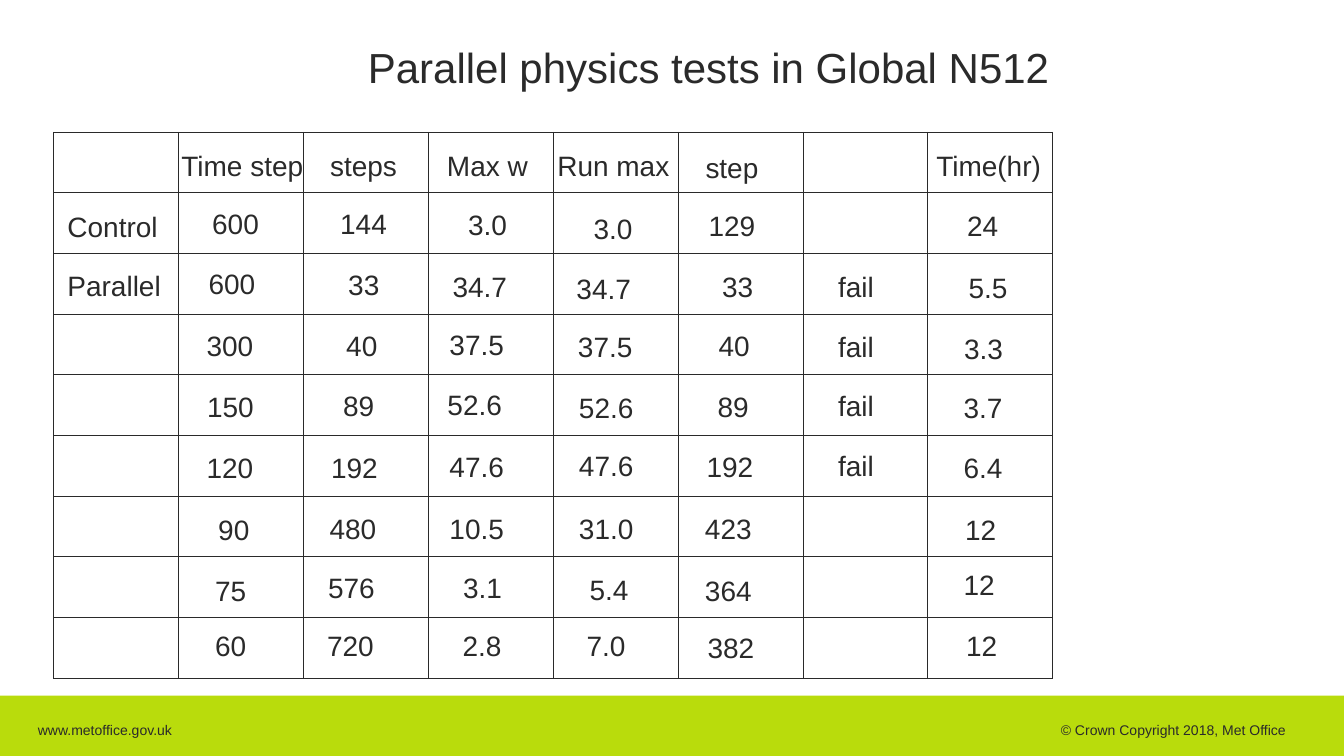
from lxml.etree import SubElement
from pptx import Presentation
from pptx.dml.color import RGBColor
from pptx.enum.shapes import MSO_SHAPE
from pptx.enum.text import MSO_ANCHOR, MSO_AUTO_SIZE, PP_ALIGN
from pptx.oxml.ns import qn
from pptx.util import Inches, Pt

COLORS = {"ink": "2A2A2A", "lime": "B9DC0C"}
PAD = 0.08
DIGIT, POINT = 0.31, 0.155
WORDS = {
    "Control": 1.97, "Parallel": 2.03, "Time step": 2.62, "steps": 1.5,
    "Max w": 1.78, "Run max": 2.4, "step": 1.22, "Time(hr)": 2.28, "fail": 0.87,
}

# Each label is (text, left, top), listed by column.
LABELS = {
    "case": [("Control", 1.26, 4.07), ("Parallel", 1.26, 5.24)],
    "time step": [
        ("Time step", 3.52, 2.86), ("600", 4.13, 4.01), ("600", 4.06, 5.2),
        ("300", 4.02, 6.43), ("150", 4.03, 7.65), ("120", 4.02, 8.85),
        ("90", 4.25, 10.08), ("75", 4.19, 11.3), ("60", 4.19, 12.38),
    ],
    "steps": [
        ("steps", 6.47, 2.87), ("144", 6.67, 4.02), ("33", 6.83, 5.22),
        ("40", 6.79, 6.43), ("89", 6.73, 7.62), ("192", 6.49, 8.85),
        ("480", 6.46, 10.06), ("576", 6.43, 11.23), ("720", 6.41, 12.38),
    ],
    "max w": [
        ("Max w", 8.79, 2.86), ("3.0", 9.21, 4.04), ("34.7", 8.9, 5.27),
        ("37.5", 8.84, 6.41), ("52.6", 8.8, 7.6), ("47.6", 8.84, 8.84),
        ("10.5", 8.84, 10.06), ("3.1", 9.11, 11.24), ("2.8", 9.1, 12.39),
    ],
    "run max": [
        ("Run max", 10.98, 2.87), ("3.0", 11.7, 4.11), ("34.7", 11.36, 5.3),
        ("37.5", 11.39, 6.46), ("52.6", 11.41, 7.67), ("47.6", 11.41, 8.82),
        ("31.0", 11.41, 10.06), ("5.4", 11.62, 11.27), ("7.0", 11.56, 12.39),
    ],
    "step": [
        ("step", 13.92, 2.91), ("129", 13.98, 4.06), ("33", 14.25, 5.26),
        ("40", 14.18, 6.43), ("89", 14.16, 7.65), ("192", 13.94, 8.83),
        ("423", 13.91, 10.06), ("364", 13.91, 11.29), ("382", 13.96, 12.42),
    ],
    "result": [("fail", 16.55, top) for top in (5.26, 6.45, 7.62, 8.81)],
    "hours": [
        ("Time(hr)", 18.5, 2.87), ("24", 19.11, 4.06), ("5.5", 19.14, 5.29),
        ("3.3", 19.05, 6.49), ("3.7", 19.04, 7.67), ("6.4", 19.04, 8.85),
        ("12", 19.07, 10.08), ("12", 19.04, 11.17), ("12", 19.09, 12.39),
    ],
}


def color(name):
    return RGBColor.from_string(COLORS[name])


def measure(text):
    """Return the box width of a word or number at 40 points."""
    if text in WORDS:
        return WORDS[text]
    points = text.count(".")
    return (len(text) - points) * DIGIT + points * POINT + 2 * PAD


class Deck:
    def __init__(self, slide, face="Arial"):
        self.slide = slide
        self.face = face

    def style(self, para, size):
        for run in para.runs:
            run.font.name = self.face
            run.font.size = Pt(size)
            run.font.color.rgb = color("ink")

    def label(self, text, left, top, width, height=0.83, size=40):
        box = self.slide.shapes.add_textbox(
            Inches(left), Inches(top), Inches(width), Inches(height))
        frame = box.text_frame
        frame.text = text
        frame.word_wrap = False
        frame.auto_size = MSO_AUTO_SIZE.SHAPE_TO_FIT_TEXT
        frame.vertical_anchor = MSO_ANCHOR.MIDDLE
        frame.margin_left = frame.margin_right = Inches(PAD)
        frame.margin_top = frame.margin_bottom = Inches(PAD)
        self.style(frame.paragraphs[0], size)

    def footer(self, left_text, right_text, stop):
        """Draw the bottom band; the right text ends at the tab stop."""
        band = self.slide.shapes.add_shape(
            MSO_SHAPE.RECTANGLE, 0, Inches(13.8), Inches(26.67), Inches(1.2))
        band.shadow.inherit = False
        band.fill.solid()
        band.fill.fore_color.rgb = color("lime")
        band.line.fill.background()
        frame = band.text_frame
        frame.word_wrap = True
        frame.vertical_anchor = MSO_ANCHOR.MIDDLE
        frame.margin_left, frame.margin_right = Inches(0.75), Inches(0.1)
        frame.margin_top, frame.margin_bottom = Inches(0.2), Inches(0.04)
        frame.text = f"{left_text}\t{right_text}"
        para = frame.paragraphs[0]
        para.alignment = PP_ALIGN.LEFT
        tabs = SubElement(para._p.get_or_add_pPr(), qn("a:tabLst"))
        SubElement(tabs, qn("a:tab"), pos=str(Inches(stop)), algn="r")
        self.style(para, 20)

    def grid(self, rows, cols, left, top, width, height):
        table = self.slide.shapes.add_table(
            rows, cols, Inches(left), Inches(top),
            Inches(width), Inches(height)).table
        table.first_row = table.horz_banding = False
        for cell in table.iter_cells():
            self.border(cell)
            cell.fill.background()

    def border(self, cell):
        props = cell._tc.get_or_add_tcPr()
        for side in ("lnL", "lnR", "lnT", "lnB"):
            line = SubElement(props, qn(f"a:{side}"), w=str(Pt(1)))
            fill = SubElement(line, qn("a:solidFill"))
            SubElement(fill, qn("a:srgbClr"), val=COLORS["ink"])


def main():
    prs = Presentation()
    prs.slide_width, prs.slide_height = Inches(26.67), Inches(15)
    deck = Deck(prs.slides.add_slide(prs.slide_layouts[6]))
    deck.footer("www.metoffice.gov.uk",
                "© Crown Copyright 2018, Met Office", stop=24.77)
    deck.label("Parallel physics tests in Global N512",
               7.22, 0.74, 13.82, height=1.17, size=60)
    deck.grid(9, 8, 1.06, 2.62, 19.83, 10.83)
    for column in LABELS.values():
        for text, left, top in column:
            deck.label(text, left, top, measure(text))
    prs.save("out.pptx")


if __name__ == "__main__":
    main()
